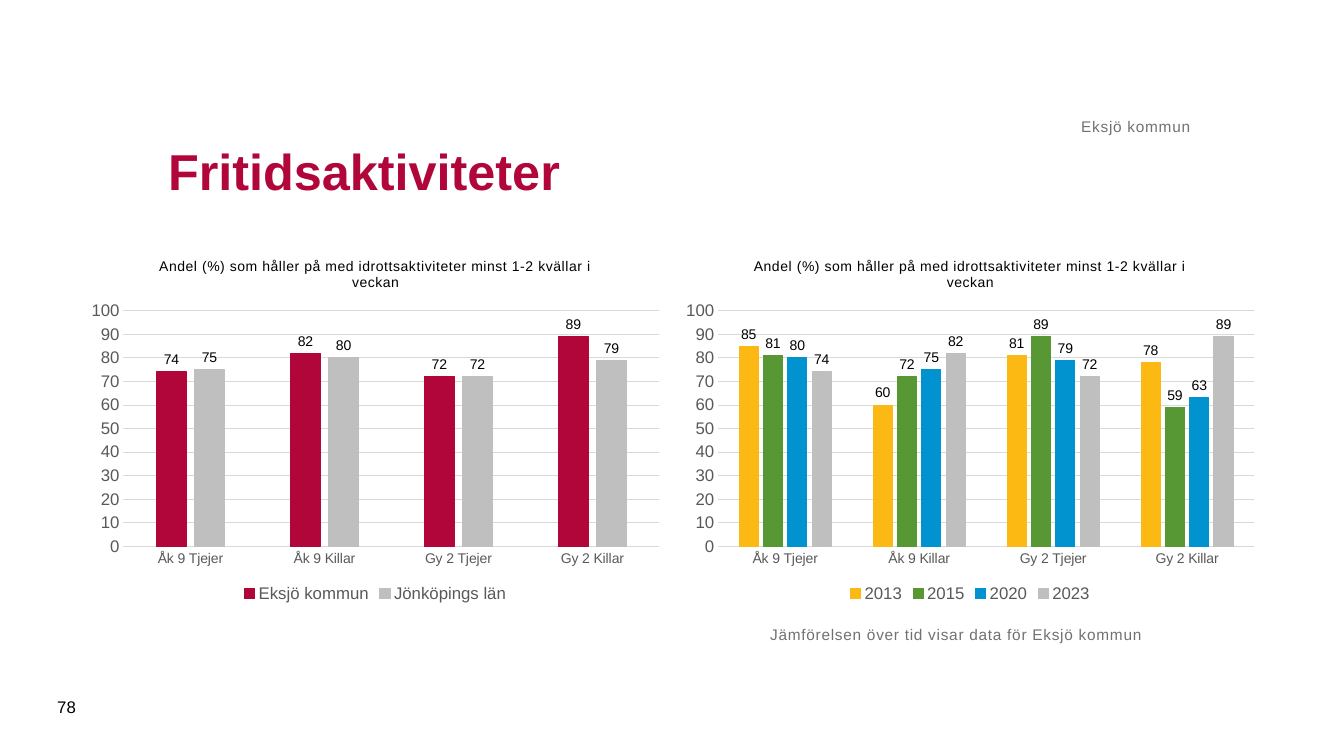
import pptx
import pptx.chart.data
import pptx.dml.color
import pptx.enum.chart
import pptx.enum.text
import pptx.util

Pt = pptx.util.Pt
RGB = pptx.dml.color.RGBColor.from_string
XL = pptx.enum.chart
ANCHOR = pptx.enum.text.MSO_ANCHOR
ALIGN = pptx.enum.text.PP_ALIGN

THEME = {
    "font": "Arial",
    "crimson": "B1063A", "silver": "BFBFBF", "amber": "FDB913",
    "green": "579835", "blue": "0093D0",
    "black": "000000", "axis": "595959", "grid": "D9D9D9", "caption": "717171",
    "heading_size": 36, "axis_size": 12, "caption_size": 11, "chart_size": 10,
}
NUMBER_FORMAT = "#,##0;#,##0"
QUESTION = "Andel (%) som håller på med idrottsaktiviteter minst 1-2 kvällar i veckan"
GROUPS = ["Åk 9 Tjejer", "Åk 9 Killar", "Gy 2 Tjejer", "Gy 2 Killar"]


def style_font(font, size, color, bold=False):
    settings = {"name": THEME["font"], "size": Pt(THEME[size]), "bold": bold}
    for attribute, value in settings.items():
        setattr(font, attribute, value)
    font.color.rgb = RGB(THEME[color])


def style_line(line, color):
    line.color.rgb = RGB(color)
    line.width = Pt(0.75)


presentation = pptx.Presentation()
presentation.slide_width = Pt(960)
presentation.slide_height = Pt(540)
slide = presentation.slides.add_slide(presentation.slide_layouts[6])

# Charts: municipality against county, then development over time
comparison = [
    ("Eksjö kommun", [74, 82, 72, 89], "crimson"),
    ("Jönköpings län", [75, 80, 72, 79], "silver"),
]
over_time = [
    ("2013", [85, 60, 81, 78], "amber"),
    ("2015", [81, 72, 89, 59], "green"),
    ("2020", [80, 75, 79, 63], "blue"),
    ("2023", [74, 82, 72, 89], "silver"),
]
for left, bars in [(56.9, comparison), (481.7, over_time)]:
    shares = pptx.chart.data.CategoryChartData(number_format="0")
    shares.categories = GROUPS
    for name, values, _ in bars:
        shares.add_series(name, values)
    chart = slide.shapes.add_chart(
        XL.XL_CHART_TYPE.COLUMN_CLUSTERED,
        Pt(left), Pt(172.8), Pt(422.6), Pt(260.6), shares).chart
    style_font(chart.font, "chart_size", "black")

    # Question above the bars
    chart.has_title = True
    question = chart.chart_title.text_frame.paragraphs[0].add_run()
    question.text = QUESTION
    style_font(question.font, "chart_size", "black")
    question.font._element.set("spc", "50")
    chart.chart_title.include_in_layout = False

    # Legend
    chart.has_legend = True
    chart.legend.position = XL.XL_LEGEND_POSITION.BOTTOM
    chart.legend.include_in_layout = False
    style_font(chart.legend.font, "axis_size", "axis")

    # Axes
    groups, percent = chart.category_axis, chart.value_axis
    for axis, size in [(groups, "chart_size"), (percent, "axis_size")]:
        axis.major_tick_mark = axis.minor_tick_mark = XL.XL_TICK_MARK.NONE
        style_font(axis.tick_labels.font, size, "axis")
    style_line(groups.format.line, THEME["grid"])
    percent_scale = {"minimum_scale": 0, "maximum_scale": 100,
                     "major_unit": 10, "has_major_gridlines": True}
    for attribute, value in percent_scale.items():
        setattr(percent, attribute, value)
    percent.format.line.fill.background()
    style_line(percent.major_gridlines.format.line, THEME["grid"])
    percent.tick_labels.number_format = NUMBER_FORMAT
    percent.tick_labels.number_format_is_linked = False

    # Bars and their values
    plot = chart.plots[0]
    plot.gap_width, plot.overlap, plot.vary_by_categories = 219, -27, False
    for series, (_, _, color) in zip(plot.series, bars):
        series.format.fill.solid()
        series.format.fill.fore_color.rgb = RGB(THEME[color])
        style_line(series.format.line, THEME[color])
        series.invert_if_negative = False
        labels = series.data_labels
        label_settings = {"show_value": True, "number_format": NUMBER_FORMAT,
                          "number_format_is_linked": False,
                          "position": XL.XL_LABEL_POSITION.OUTSIDE_END}
        for attribute, value in label_settings.items():
            setattr(labels, attribute, value)
        style_font(labels.font, "chart_size", "black")

# Heading, municipality, page number and note:
# text, box, size, color, bold, anchor, alignment, insets, letter spacing
texts = [
    ("Fritidsaktiviteter", (113, 70.6, 737.3, 102.2), "heading_size", "crimson",
     True, ANCHOR.MIDDLE, ALIGN.LEFT, (7.2, 3.6), 0),
    ("Eksjö kommun", (113, 44.6, 737.3, 52.6), "caption_size", "caption",
     False, ANCHOR.BOTTOM, ALIGN.RIGHT, (0, 0), 50),
    ("78", (33.8, 490.3, 41, 28.8), "axis_size", "black",
     False, ANCHOR.MIDDLE, ALIGN.LEFT, (7.2, 3.6), 0),
    ("Jämförelsen över tid visar data för Eksjö kommun", (550.1, 446.4, 382.3, 67.7),
     "caption_size", "caption", False, ANCHOR.TOP, ALIGN.LEFT, (0, 0), 50),
]
for wording, box, size, color, bold, anchor, alignment, (side, edge), spacing in texts:
    frame = slide.shapes.add_textbox(*map(Pt, box)).text_frame
    frame_settings = {"word_wrap": True, "vertical_anchor": anchor,
                      "margin_left": Pt(side), "margin_right": Pt(side),
                      "margin_top": Pt(edge), "margin_bottom": Pt(edge)}
    for attribute, value in frame_settings.items():
        setattr(frame, attribute, value)
    frame.paragraphs[0].alignment = alignment
    run = frame.paragraphs[0].add_run()
    run.text = wording
    style_font(run.font, size, color, bold)
    if spacing:
        run.font._element.set("spc", str(spacing))

presentation.save("out.pptx")
